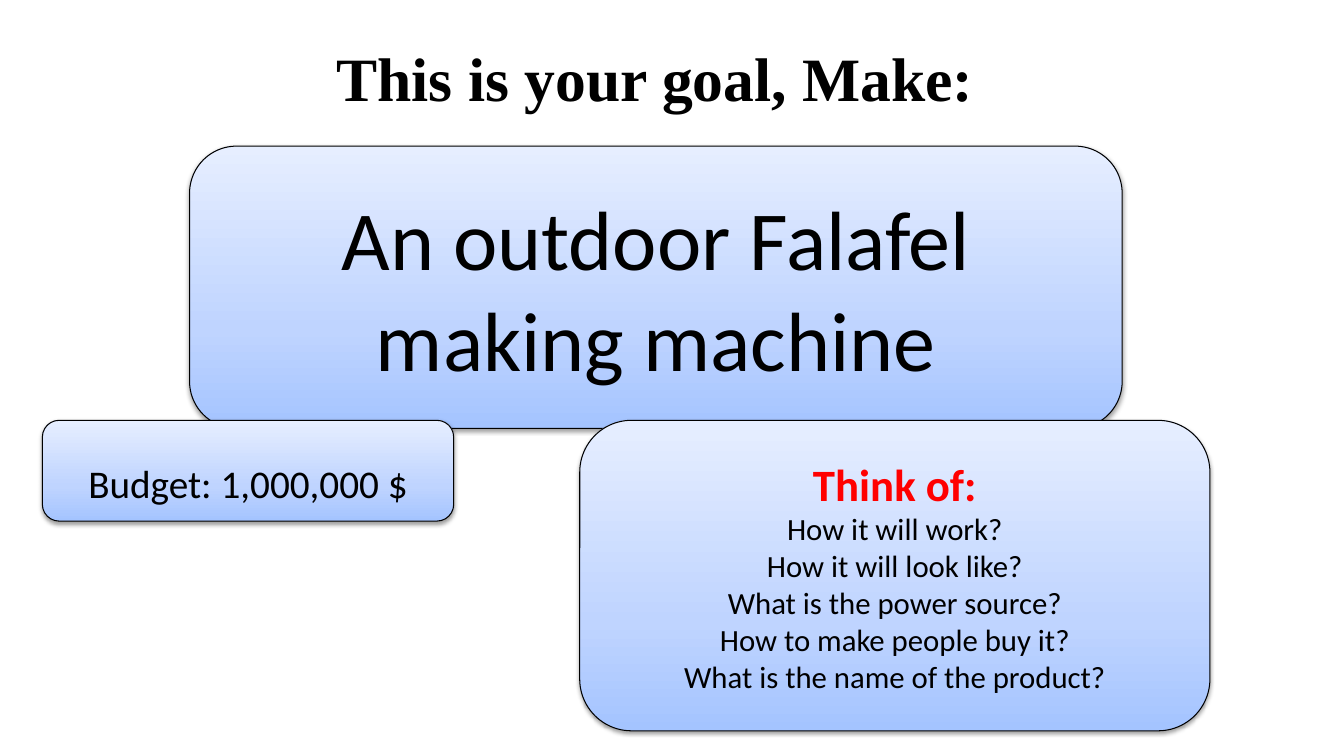
from copy import deepcopy

from lxml import etree
from pptx import Presentation
from pptx.dml.color import RGBColor
from pptx.enum.shapes import MSO_SHAPE as Shape
from pptx.enum.text import MSO_ANCHOR as Anchor, PP_ALIGN as Align
from pptx.oxml.ns import qn
from pptx.util import Inches, Pt

BLACK = RGBColor(0x00, 0x00, 0x00)
RED = RGBColor(0xFF, 0x00, 0x00)
PANEL_STOPS = [
    (0, RGBColor(0xA4, 0xC4, 0xFF)),
    (0.35, RGBColor(0xBF, 0xD4, 0xFF)),
    (1, RGBColor(0xE6, 0xEE, 0xFF)),
]

TITLE = {"name": "Times New Roman", "size": Pt(44), "bold": True}
GOAL = {"name": "Calibri", "size": Pt(60)}
BUDGET = {"name": "Calibri", "size": Pt(28)}
HEADING = {"name": "Calibri", "size": Pt(32), "bold": True}
QUESTION = {"name": "Calibri", "size": Pt(22), "bold": False}

QUESTIONS = [
    "How it will work?",
    "How it will look like?",
    "What is the power source?",
    "How to make people buy it?",
    "What is the name of the product?",
]


def write_lines(shape, lines, spacing=None):
    """Fill a shape with centred (text, format, colour) paragraphs."""
    frame = shape.text_frame
    frame.word_wrap = True
    frame.vertical_anchor = Anchor.MIDDLE
    for index, (text, style, color) in enumerate(lines):
        para = frame.add_paragraph() if index else frame.paragraphs[0]
        para.alignment = Align.CENTER
        if spacing:
            para.line_spacing = spacing
        span = para.add_run()
        span.text = text
        for key, value in style.items():
            setattr(span.font, key, value)
        span.font.color.rgb = color


def fill_gradient(shape):
    fill = shape.fill
    fill.gradient()
    fill.gradient_angle = 90
    stop_list = shape._element.spPr.find(".//" + qn("a:gsLst"))
    stop_list.append(deepcopy(stop_list[-1]))
    for stop, (position, color) in zip(fill.gradient_stops, PANEL_STOPS):
        stop.position = position
        stop.color.rgb = color


def drop_shadow(shape):
    shape.shadow.inherit = False
    effects = shape._element.spPr.find(qn("a:effectLst"))
    shadow = etree.SubElement(effects, qn("a:outerShdw"), blurRad="40000",
                              dist="20000", dir="5400000", rotWithShape="0")
    color = etree.SubElement(shadow, qn("a:srgbClr"), val="000000")
    etree.SubElement(color, qn("a:alpha"), val="38000")


def add_title(page, box):
    title = page.shapes.add_textbox(*map(Inches, box))
    write_lines(title, [("This is your goal, Make:", TITLE, BLACK)])


def add_panel(page, box, lines, spacing=None):
    panel = page.shapes.add_shape(Shape.ROUNDED_RECTANGLE, *map(Inches, box))
    fill_gradient(panel)
    panel.line.color.rgb = BLACK
    panel.line.width = Pt(0.75)
    drop_shadow(panel)
    write_lines(panel, lines, spacing)


def main():
    deck = Presentation()
    deck.slide_width = Inches(13.33)
    deck.slide_height = Inches(7.5)
    page = deck.slides.add_slide(deck.slide_layouts[6])

    add_title(page, (2, 0.33, 9, 0.87))
    add_panel(page, (1.88, 1.45, 9.25, 2.8),
              [("An outdoor Falafel making machine", GOAL, BLACK)])
    add_panel(page, (0.42, 4.17, 4.08, 1),
              [("Budget: 1,000,000 $", BUDGET, BLACK)], spacing=1.5)
    add_panel(page, (5.75, 4.17, 6.25, 3.08),
              [("Think of:", HEADING, RED)]
              + [(question, QUESTION, BLACK) for question in QUESTIONS])
    deck.save("out.pptx")


if __name__ == "__main__":
    main()
